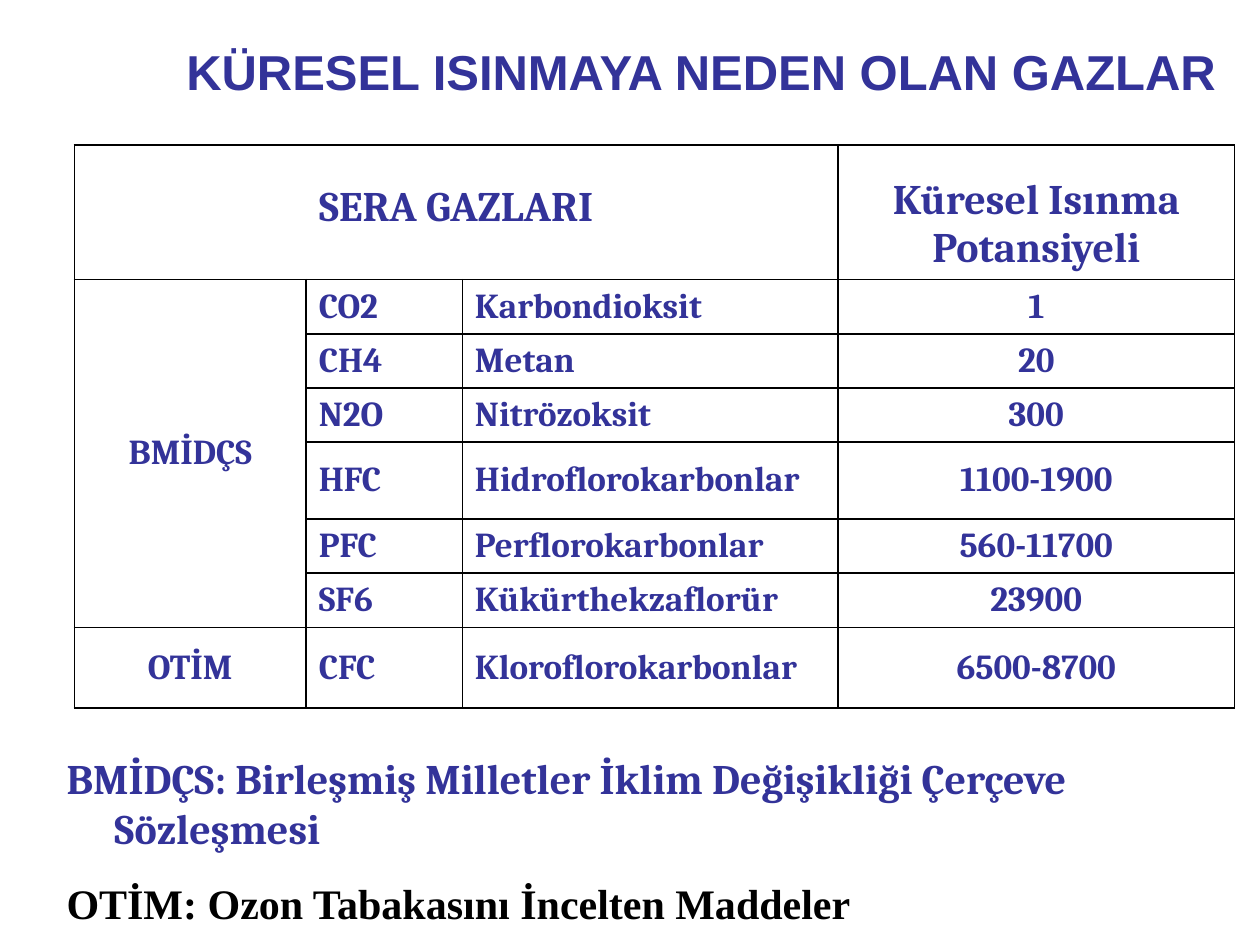
from dataclasses import dataclass

from lxml.etree import SubElement
from pptx import Presentation
from pptx.dml.color import RGBColor
from pptx.enum.text import MSO_ANCHOR, PP_ALIGN
from pptx.oxml.ns import qn
from pptx.slide import Slide
from pptx.table import Table, _Cell
from pptx.text.text import TextFrame, _Paragraph
from pptx.util import Inches, Pt

NAVY = RGBColor(0x33, 0x33, 0x99)
BLACK = RGBColor(0, 0, 0)


@dataclass(frozen=True)
class Gas:
    code: str
    name: str
    power: str
    high: float = 0.43


GASES = [
    Gas("CO2", "Karbondioksit", "1"),
    Gas("CH4", "Metan", "20"),
    Gas("N2O", "Nitrözoksit", "300"),
    Gas("HFC", "Hidroflorokarbonlar", "1100-1900", 0.61),
    Gas("PFC", "Perflorokarbonlar", "560-11700"),
    Gas("SF6", "Kükürthekzaflorür", "23900"),
    Gas("CFC", "Kloroflorokarbonlar", "6500-8700", 0.64),
]
WIDTHS = [1.84, 1.24, 2.98, 3.15]
HEAD = 1.07


def write(para: _Paragraph, text: str, *, size: int = 20, face: str = "Cambria",
          color: RGBColor = NAVY, align: PP_ALIGN = PP_ALIGN.LEFT,
          before: int = 0, hang: float = 0) -> None:
    if hang:
        props = para._p.get_or_add_pPr()
        props.set("marL", str(Inches(hang)))
        props.set("indent", str(-Inches(hang)))
    para.alignment = align
    para.space_before = Pt(before)
    run = para.add_run()
    run.text = text
    run.font.size = Pt(size)
    run.font.name = face
    run.font.bold = True
    run.font.color.rgb = color


def rule(cell: _Cell) -> None:
    props = cell._tc.get_or_add_tcPr()
    for side in ("lnL", "lnR", "lnT", "lnB"):
        line = SubElement(props, qn(f"a:{side}"), w=str(Pt(1)))
        fill = SubElement(line, qn("a:solidFill"))
        SubElement(fill, qn("a:srgbClr"), val=str(BLACK))
    cell.fill.background()


def put(table: Table, row: int, col: int, text: str, size: int = 20) -> _Cell:
    cell = table.cell(row, col)
    cell.vertical_anchor = MSO_ANCHOR.MIDDLE if row else MSO_ANCHOR.BOTTOM
    align = PP_ALIGN.LEFT if col in (1, 2) else PP_ALIGN.CENTER
    write(cell.text_frame.paragraphs[0], text, size=size, align=align)
    return cell


def draw_table(slide: Slide) -> None:
    highs = [HEAD] + [gas.high for gas in GASES]
    frame = slide.shapes.add_table(
        len(highs), len(WIDTHS), Inches(0.59), Inches(1.15),
        Inches(sum(WIDTHS)), Inches(sum(highs)))
    table = frame.table
    table.first_row = False
    table.horz_banding = False
    for col, width in zip(table.columns, WIDTHS):
        col.width = Inches(width)
    for row, high in zip(table.rows, highs):
        row.height = Inches(high)
    for cell in table.iter_cells():
        rule(cell)
    last = len(GASES)
    table.cell(0, 0).merge(table.cell(0, 2))
    table.cell(1, 0).merge(table.cell(last - 1, 0))
    title = put(table, 0, 0, "SERA GAZLARI", 24)
    title.margin_bottom = Inches(0.38)
    put(table, 0, 3, "Küresel Isınma Potansiyeli", 24)
    put(table, 1, 0, "BMİDÇS")
    put(table, last, 0, "OTİM")
    for row, gas in enumerate(GASES, 1):
        for col, text in enumerate((gas.code, gas.name, gas.power), 1):
            put(table, row, col, text)


def add_box(slide: Slide, left: float, top: float, width: float,
            high: float) -> TextFrame:
    box = slide.shapes.add_textbox(
        Inches(left), Inches(top), Inches(width), Inches(high))
    box.text_frame.word_wrap = True
    return box.text_frame


def main() -> None:
    deck = Presentation()
    deck.slide_width = Inches(10)
    deck.slide_height = Inches(7.5)
    slide = deck.slides.add_slide(deck.slide_layouts[6])
    draw_table(slide)
    notes = add_box(slide, 0.43, 5.92, 9.14, 1.51)
    write(notes.paragraphs[0],
          "BMİDÇS: Birleşmiş Milletler İklim Değişikliği Çerçeve Sözleşmesi",
          size=24, hang=0.38)
    write(notes.add_paragraph(), "OTİM: Ozon Tabakasını İncelten Maddeler",
          size=24, face="Times New Roman", color=BLACK, before=14, hang=0.38)
    title = add_box(slide, 1.38, 0.28, 8.62, 0.57)
    write(title.paragraphs[0], "KÜRESEL ISINMAYA NEDEN OLAN GAZLAR",
          size=28, face="Arial")
    deck.save("out.pptx")


if __name__ == "__main__":
    main()
